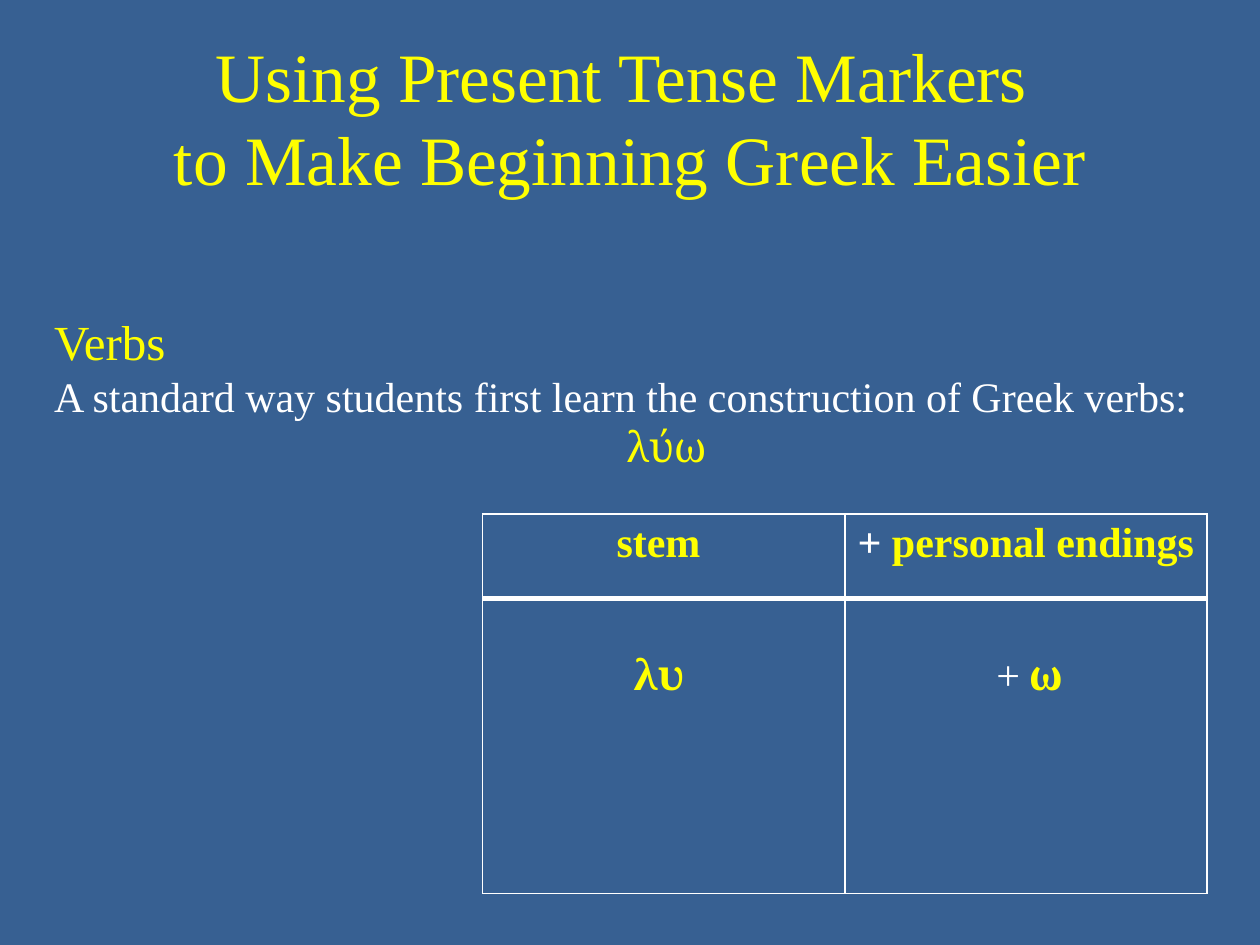
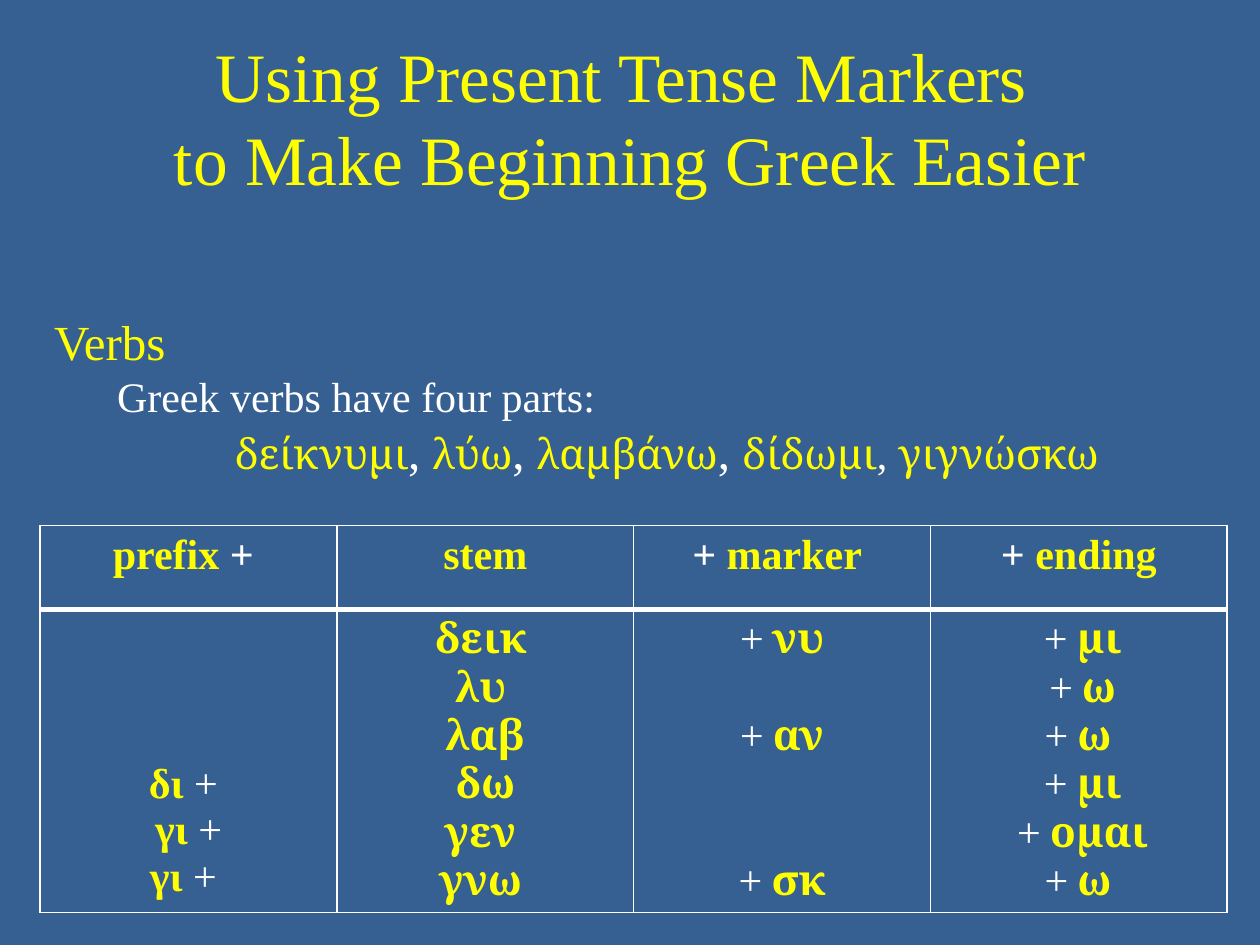
import pptx
import pptx.util
import pptx.dml.color
import pptx.enum.text
import pptx.oxml
from pptx.oxml.ns import qn

Cm, Pt = pptx.util.Cm, pptx.util.Pt
ALIGN = pptx.enum.text.PP_ALIGN
COLORS = {"back": "376092", "key": "FFFF00", "plain": "FFFFFF"}
ROMAN, GREEK = "Times New Roman", "Cambria"
TITLE = ("Using Present Tense Markers ", "to Make Beginning Greek Easier")
LINE = 27.6     # height of one 24 pt line, in points
PAD = 3.6       # top margin of a cell, in points
HEAD = 1.7      # height of a header row, in cm


def color(name):
    return pptx.dml.color.RGBColor.from_string(COLORS[name])


def write(para, text, size=24, font=ROMAN, tint="key", bold=False):
    """Add one formatted run to a paragraph."""
    run = para.add_run()
    run.text = text
    run.font.size = Pt(size)
    run.font.name = font
    run.font.bold = bold
    run.font.color.rgb = color(tint)


def layout(para, center=False, left=0):
    para.alignment = ALIGN.CENTER if center else ALIGN.LEFT
    props = para._p.get_or_add_pPr()
    props.set("marL", str(Cm(left)))
    props.set("indent", "0")


def write_sum(para, text, font, bold_plus):
    """Write a word part in yellow and its plus sign in white."""
    before, plus, after = text.partition("+")
    if before:
        write(para, before, font=font, bold=True)
    if plus:
        write(para, plus, tint="plain", bold=bold_plus)
    if after:
        write(para, after, font=font, bold=True)


def add_title(slide):
    title = slide.shapes.title
    title.left, title.top = Cm(1.27), Cm(0.76)
    title.width, title.height = Cm(22.86), Cm(3.18)
    frame = title.text_frame
    frame.vertical_anchor = pptx.enum.text.MSO_ANCHOR.MIDDLE
    para = frame.paragraphs[0]
    layout(para, center=True)
    write(para, TITLE[0], size=39.6)
    para.add_line_break()
    write(para, TITLE[1], size=39.6)


def add_intro(slide, lead, left, words, height):
    """Heading, lead sentence and a centred line of Greek verbs."""
    box = slide.shapes.add_textbox(Cm(0.84), Cm(6.15), Cm(23.93), Cm(height))
    frame = box.text_frame
    frame.word_wrap = True
    frame.auto_size = pptx.enum.text.MSO_AUTO_SIZE.SHAPE_TO_FIT_TEXT
    para = frame.paragraphs[0]
    layout(para)
    write(para, "Verbs", size=28)
    para = frame.add_paragraph()
    layout(para, left=left)
    write(para, lead, tint="plain")
    para = frame.add_paragraph()
    layout(para, center=True, left=1.27)
    for spot, word in enumerate(words):
        if spot:
            last = spot == len(words) - 1
            write(para, ", ", size=24 if last else 28, tint="plain")
        write(para, word, font=GREEK)


def set_edges(cell, **widths):
    """Draw the four white cell borders, widths in points."""
    props = cell._tc.get_or_add_tcPr()
    for spot, side in enumerate("LRTB"):
        edge = pptx.oxml.parse_xml(
            '<a:ln%s xmlns:a="http://schemas.openxmlformats.org/drawingml/2006/main"'
            ' w="%d"><a:solidFill><a:srgbClr val="%s"/></a:solidFill></a:ln%s>'
            % (side, Pt(widths.get(side, 1)), COLORS["plain"], side))
        props.insert(spot, edge)


def fill_cell(cell, lines, font=ROMAN, left=0, bold_plus=False):
    """Write the lines of a cell; None leaves the height of one line."""
    frame = cell.text_frame
    gap, para = 0, None
    for text in lines:
        if text is None:
            gap += 1
            continue
        if para is None:
            para = frame.paragraphs[0]
            cell.margin_top = Pt(PAD + gap * LINE)
        else:
            para = frame.add_paragraph()
            para.space_before = Pt(gap * LINE)
        layout(para, center=True, left=left)
        write_sum(para, text, font, bold_plus)
        gap = 0


def add_parts(slide, left, top, width, height, parts):
    """Table with one column for each part of the verb."""
    table = slide.shapes.add_table(2, len(parts), Cm(left), Cm(top), Cm(width),
                                   Cm(HEAD + height)).table
    table.horz_banding = False
    table.rows[0].height, table.rows[1].height = Cm(HEAD), Cm(height)
    for col, (head, lines, style) in enumerate(parts):
        table.columns[col].width = Cm(width / len(parts))
        top_cell, low_cell = table.cell(0, col), table.cell(1, col)
        fill_cell(top_cell, [head], bold_plus=True)
        fill_cell(low_cell, lines, **style)
        for cell in (top_cell, low_cell):
            cell.fill.background()
        set_edges(top_cell, B=3)
        set_edges(low_cell, T=3)


def add_slide(deck):
    slide = deck.slides.add_slide(deck.slide_layouts[5])
    add_title(slide)
    return slide


def main():
    deck = pptx.Presentation()
    deck.slide_width, deck.slide_height = Cm(25.4), Cm(19.05)
    fill = deck.slide_master.background.fill
    fill.solid()
    fill.fore_color.rgb = color("back")

    stem = {"font": GREEK}
    ending = {"font": GREEK, "left": 0.15}

    # Two parts: stem and ending
    slide = add_slide(deck)
    add_parts(slide, 9.73, 10.36, 14.6, 5.95, [
        ("stem ", [None, "λυ "], stem),
        ("+ personal endings", [None, "+ ω"], ending),
    ])
    add_intro(slide, "A standard way students first learn the construction "
              "of Greek verbs:", 0, ["λύω"], 3.5)

    # Four parts: prefix, stem, marker and ending
    slide = add_slide(deck)
    add_parts(slide, 0.81, 10.59, 23.93, 6.1, [
        ("prefix + ", [None, None, None, "δι + ", "γι +", "γι + "], {}),
        ("stem", ["δεικ ", "λυ ", "λαβ", "δω", "γεν ", "γνω "], stem),
        ("+ marker ", ["+ νυ", None, "+ αν", None, None, "+ σκ"], stem),
        ("+ ending", [" + μι ", "+ ω", "+ ω ", "+ μι", "+ ομαι", "+ ω "],
         ending),
    ])
    add_intro(slide, "Greek verbs have four parts:", 1.27,
              ["δείκνυμι", "λύω", "λαμβάνω", "δίδωμι", "γιγνώσκω"], 3.68)

    deck.save("out.pptx")


if __name__ == "__main__":
    main()
